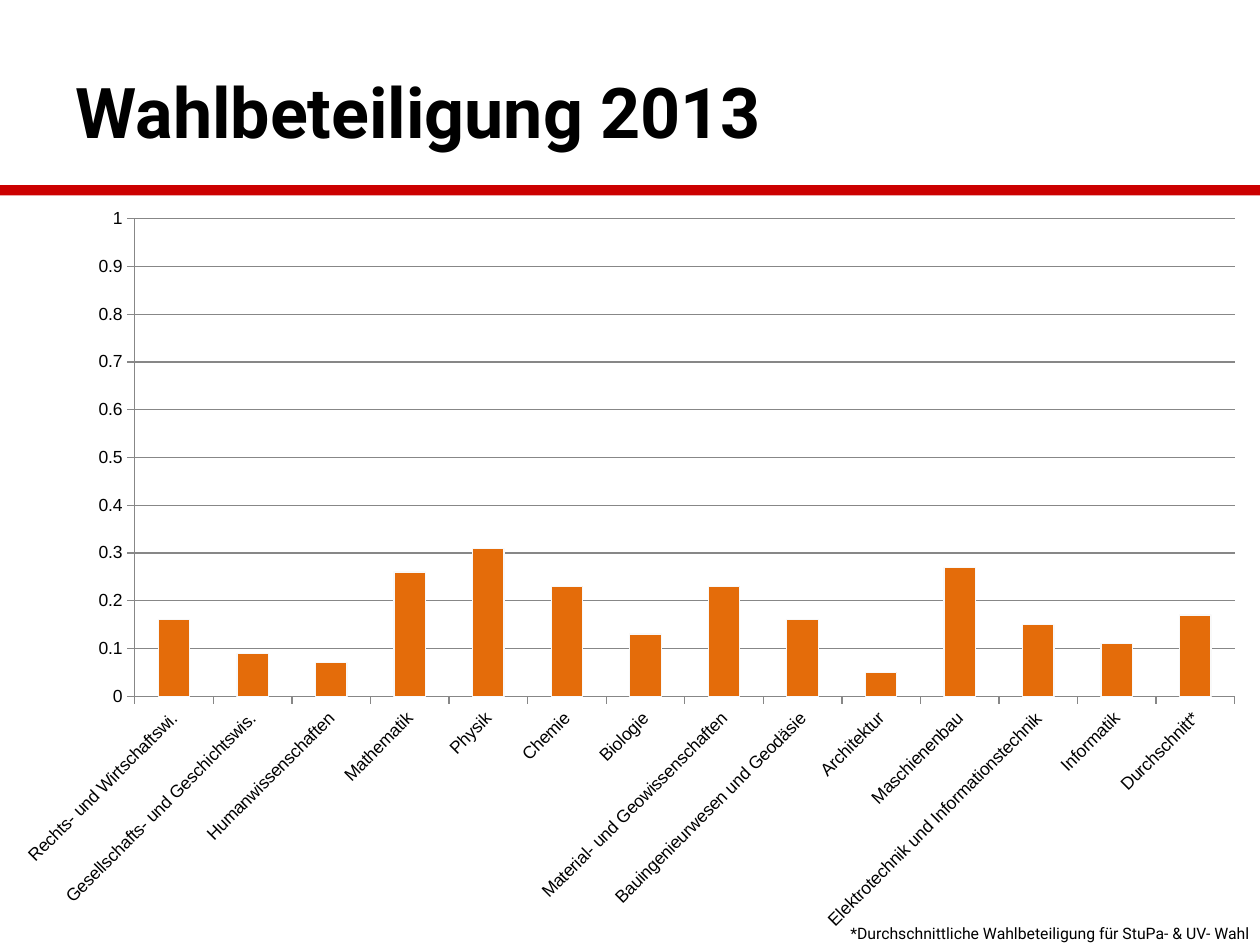
from dataclasses import dataclass

from lxml.etree import SubElement
from pptx import Presentation
from pptx.chart.data import CategoryChartData
from pptx.dml.color import RGBColor
from pptx.enum.chart import XL_CHART_TYPE as ChartType, XL_TICK_MARK as TickMark
from pptx.enum.shapes import MSO_SHAPE as Shape
from pptx.enum.text import MSO_ANCHOR as Anchor, PP_ALIGN as Align
from pptx.oxml.ns import qn
from pptx.util import Inches, Pt


@dataclass(frozen=True)
class Theme:
    text: RGBColor = RGBColor.from_string("000000")
    rule: RGBColor = RGBColor.from_string("CC0000")
    bar: RGBColor = RGBColor.from_string("E46C0A")
    bar_edge: RGBColor = RGBColor.from_string("F9F9F9")
    grid: RGBColor = RGBColor.from_string("878787")
    text_font: str = "Roboto"
    chart_font: str = "Arial"
    title_size: int = 40
    chart_size: int = 10
    note_size: int = 9
    line_width: float = 0.75


THEME = Theme()
WIDTH, HEIGHT = Inches(10), Inches(7.5)

TURNOUT = {
    "Rechts- und Wirtschaftswi.": 0.16,
    "Gesellschafts- und Geschichtswis.": 0.09,
    "Humanwissenschaften": 0.07,
    "Mathematik": 0.26,
    "Physik": 0.31,
    "Chemie": 0.23,
    "Biologie": 0.13,
    "Material- und Geowissenschaften": 0.23,
    "Bauingenieurwesen und Geodäsie": 0.16,
    "Architektur": 0.05,
    "Maschienenbau": 0.27,
    "Elektrotechnik und Informationstechnik": 0.15,
    "Informatik": 0.11,
    "Durchschnitt*": 0.17,
}


def box(left, top, width, height):
    return [Inches(length) for length in (left, top, width, height)]


def place(shape, bounds):
    shape.left, shape.top, shape.width, shape.height = bounds


def write(frame, text, size, bold=False, align=Align.LEFT, anchor=Anchor.TOP, wrap=True):
    frame.word_wrap = wrap
    frame.vertical_anchor = anchor
    paragraph = frame.paragraphs[0]
    paragraph.alignment = align
    run = paragraph.add_run()
    run.text = text
    run.font.name = THEME.text_font
    run.font.size = Pt(size)
    run.font.bold = bold
    run.font.color.rgb = THEME.text


def add_rule(slide, top, height):
    rule = slide.shapes.add_shape(Shape.RECTANGLE, 0, Inches(top), WIDTH, Inches(height))
    rule.shadow.inherit = False
    rule.fill.solid()
    rule.fill.fore_color.rgb = THEME.rule
    rule.line.fill.background()


def style_line(line, color):
    line.color.rgb = color
    line.width = Pt(THEME.line_width)


def set_plot_area(chart, **shares):
    """Fix the inner plot area; x, y, w and h are shares of the chart's size."""
    plot_area = chart._chartSpace.chart.plotArea
    for old in plot_area.findall(qn("c:layout")):
        plot_area.remove(old)
    layout = SubElement(plot_area, qn("c:layout"))
    plot_area.insert(0, layout)
    manual = SubElement(layout, qn("c:manualLayout"))
    settings = {"layoutTarget": "inner", "xMode": "edge", "yMode": "edge", **shares}
    for name, value in settings.items():
        SubElement(manual, qn(f"c:{name}")).set("val", str(value))


def style_axes(chart):
    for axis in (chart.category_axis, chart.value_axis):
        axis.major_tick_mark = TickMark.OUTSIDE
        axis.minor_tick_mark = TickMark.NONE
        style_line(axis.format.line, THEME.grid)
    value_axis = chart.value_axis
    value_axis.minimum_scale, value_axis.maximum_scale = 0, 1
    value_axis.major_unit = 0.1
    value_axis.has_major_gridlines = True
    style_line(value_axis.major_gridlines.format.line, THEME.grid)
    labels = chart.category_axis.tick_labels
    labels.font.size = Pt(THEME.chart_size)
    text_body = chart.category_axis._element.find(qn("c:txPr"))
    text_body.find(qn("a:bodyPr")).set("rot", str(-45 * 60000))


def add_column_chart(slide, values, bounds):
    data = CategoryChartData()
    data.categories = list(values)
    data.add_series("Series 1", list(values.values()))
    chart = slide.shapes.add_chart(ChartType.COLUMN_STACKED, *bounds, data).chart
    chart.has_title = False
    chart.has_legend = False
    chart.font.name = THEME.chart_font
    chart.font.size = Pt(THEME.chart_size)
    chart.font.color.rgb = THEME.text
    plot = chart.plots[0]
    plot.gap_width, plot.overlap = 150, 100
    plot.vary_by_categories = False
    series = plot.series[0]
    series.format.fill.solid()
    series.format.fill.fore_color.rgb = THEME.bar
    style_line(series.format.line, THEME.bar_edge)
    style_axes(chart)
    set_plot_area(chart, x=0.107, y=0.033, w=0.873, h=0.637)


def main():
    presentation = Presentation()
    presentation.slide_width, presentation.slide_height = WIDTH, HEIGHT
    slide = presentation.slides.add_slide(presentation.slide_layouts[5])

    add_rule(slide, top=1.47, height=0.08)
    title = slide.shapes.title
    place(title, box(0.5, 0.44, 7.18, 0.87))
    write(title.text_frame, "Wahlbeteiligung 2013", THEME.title_size,
          bold=True, anchor=Anchor.MIDDLE)
    add_column_chart(slide, TURNOUT, box(0, 1.54, 10, 5.95))
    note = slide.shapes.add_textbox(*box(6.65, 7.28, 3.39, 0.24))
    write(note.text_frame, "*Durchschnittliche Wahlbeteiligung für StuPa- & UV- Wahl",
          THEME.note_size, wrap=False)

    presentation.save("out.pptx")


if __name__ == "__main__":
    main()
